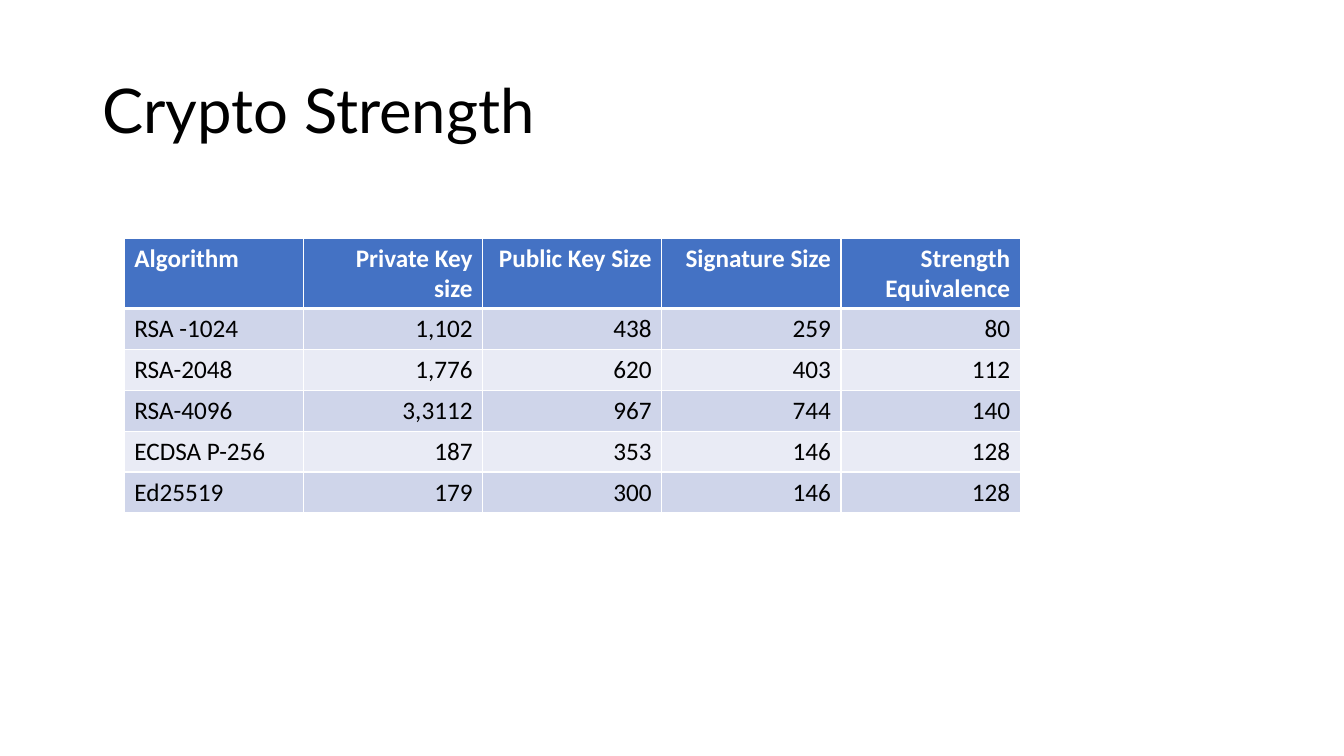
from lxml import etree
from pptx import Presentation
from pptx.dml.color import RGBColor
from pptx.enum import text
from pptx.oxml import ns
from pptx.util import Pt

WHITE, BLACK, BLUE = "FFFFFF", "000000", "4472C4"
BANDS = ("CFD5EA", "E9EBF5")
COLUMN_WIDTH, ROW_HEIGHT = 128, 29.2

STRENGTHS = [
    ("Algorithm", "Private Key size", "Public Key Size", "Signature Size", "Strength Equivalence"),
    ("RSA -1024", "1,102", "438", "259", "80"),
    ("RSA-2048", "1,776", "620", "403", "112"),
    ("RSA-4096", "3,3112", "967", "744", "140"),
    ("ECDSA P-256", "187", "353", "146", "128"),
    ("Ed25519", "179", "300", "146", "128"),
]


def rgb(color):
    return RGBColor.from_string(color)


def add_run(paragraph, wording, font, size, color, bold=False):
    run = paragraph.add_run()
    run.text = wording
    run.font.name = font
    run.font.size = Pt(size)
    run.font.bold = bold
    run.font.color.rgb = rgb(color)


def add_title(slide, wording, left, top, width, height):
    box = slide.shapes.add_textbox(Pt(left), Pt(top), Pt(width), Pt(height))
    frame = box.text_frame
    frame.word_wrap = True
    frame.vertical_anchor = text.MSO_ANCHOR.MIDDLE
    paragraph = frame.paragraphs[0]
    paragraph.line_spacing = 0.9
    add_run(paragraph, wording, "Lato", 44, BLACK)


def set_borders(cell, color, widths):
    properties = cell._tc.get_or_add_tcPr()
    for side, width in widths.items():
        line = etree.SubElement(properties, ns.qn(f"a:ln{side}"), w=str(Pt(width)))
        fill = etree.SubElement(line, ns.qn("a:solidFill"))
        etree.SubElement(fill, ns.qn("a:srgbClr"), val=color)


def style_cell(cell, wording, row, column):
    header = row == 0
    # Borders come before the fill in the cell properties
    set_borders(cell, WHITE, {"L": 1, "R": 1, "T": 3 if row == 1 else 1, "B": 3 if header else 1})
    cell.fill.solid()
    cell.fill.fore_color.rgb = rgb(BLUE if header else BANDS[(row - 1) % 2])
    paragraph = cell.text_frame.paragraphs[0]
    if column > 0:
        paragraph.alignment = text.PP_ALIGN.RIGHT
    add_run(paragraph, wording, "Calibri", 18, WHITE if header else BLACK, header)


def add_strength_table(slide, rows, left, top):
    row_count, column_count = len(rows), len(rows[0])
    table = slide.shapes.add_table(
        row_count, column_count, Pt(left), Pt(top),
        Pt(column_count * COLUMN_WIDTH), Pt(row_count * ROW_HEIGHT)).table
    for table_column in table.columns:
        table_column.width = Pt(COLUMN_WIDTH)
    for row, wordings in enumerate(rows):
        table.rows[row].height = Pt(ROW_HEIGHT)
        for column, wording in enumerate(wordings):
            style_cell(table.cell(row, column), wording, row, column)


def main():
    presentation = Presentation()
    presentation.slide_width, presentation.slide_height = Pt(960), Pt(540)
    slide = presentation.slides.add_slide(presentation.slide_layouts[6])
    # Heading
    add_title(slide, "Crypto Strength", 66, 28.75, 828, 104.4)
    # Key sizes and strength per algorithm
    add_strength_table(slide, STRENGTHS, 88.8, 170)
    presentation.save("out.pptx")


if __name__ == "__main__":
    main()
